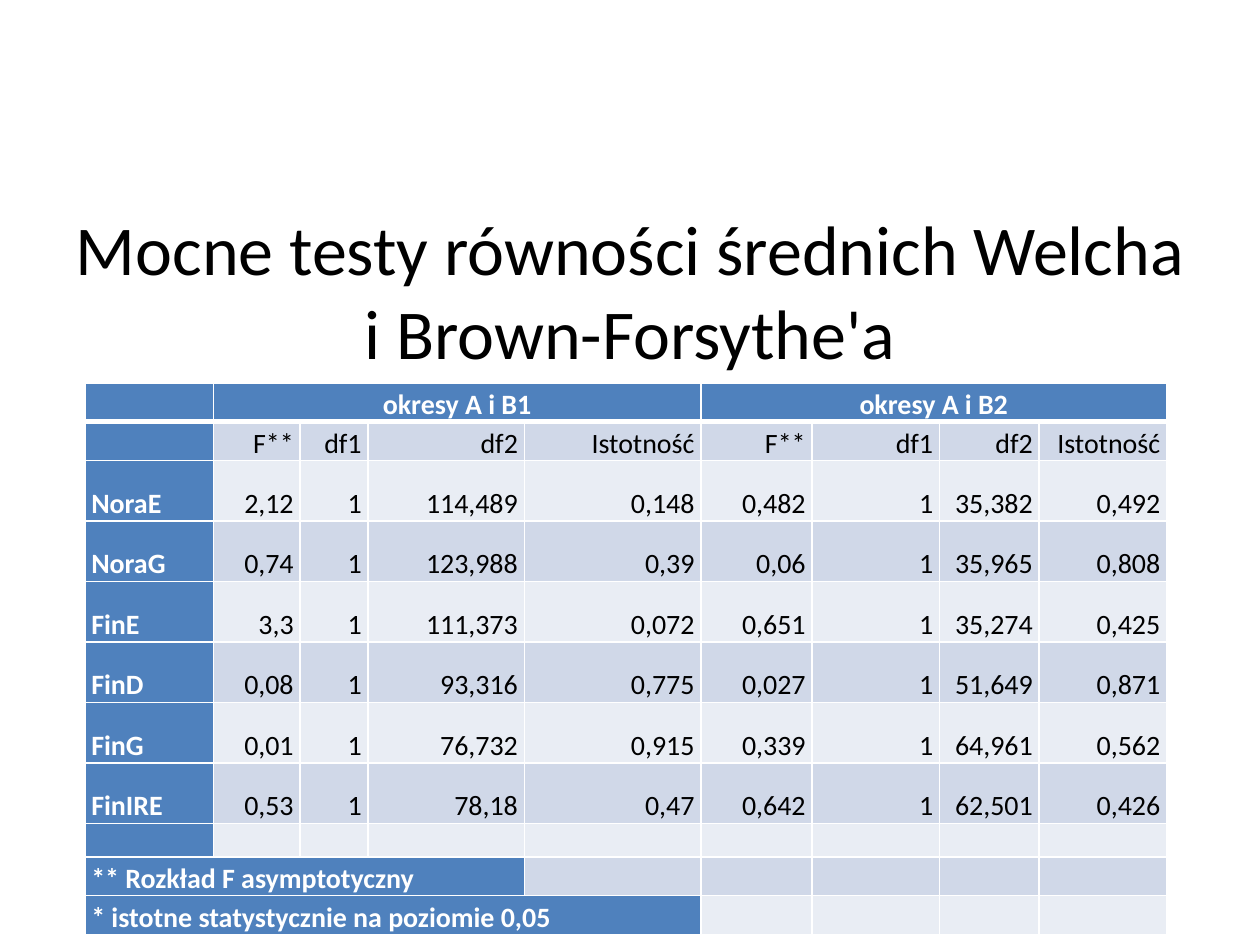
from dataclasses import dataclass

import lxml.etree
import pptx
import pptx.dml.color
import pptx.enum.text
import pptx.oxml.ns
import pptx.table
import pptx.text.text
import pptx.util
from pptx.util import Cm

FONT = "Calibri"
BLACK, WHITE, BLUE = "000000", "FFFFFF", "4F81BD"
BANDS = ("E9EDF4", "D0D8E8")
ALIGN = pptx.enum.text.PP_ALIGN
ANCHOR = pptx.enum.text.MSO_ANCHOR

COLUMN_WIDTHS = (2.59, 1.75, 1.37, 3.15, 3.56, 2.24, 2.57, 2.01, 2.57)
MEASURES = ("F**", "df1", "df2", "Istotność")


@dataclass
class Row:
    """One table row; spans maps a starting column to the columns it covers."""
    height: float
    texts: dict[int, str]
    spans: dict[int, int]


def data_row(*texts: str) -> Row:
    return Row(1.22, dict(enumerate(texts)), {})


ROWS = (
    Row(0.61, {1: "okresy A i B1", 5: "okresy A i B2"}, {1: 4, 5: 4}),
    Row(0.61, dict(enumerate(MEASURES * 2, start=1)), {}),
    data_row("NoraE", "2,12", "1", "114,489", "0,148", "0,482", "1", "35,382", "0,492"),
    data_row("NoraG", "0,74", "1", "123,988", "0,39", "0,06", "1", "35,965", "0,808"),
    data_row("FinE", "3,3", "1", "111,373", "0,072", "0,651", "1", "35,274", "0,425"),
    data_row("FinD", "0,08", "1", "93,316", "0,775", "0,027", "1", "51,649", "0,871"),
    data_row("FinG", "0,01", "1", "76,732", "0,915", "0,339", "1", "64,961", "0,562"),
    data_row("FinIRE", "0,53", "1", "78,18", "0,47", "0,642", "1", "62,501", "0,426"),
    Row(0.64, {}, {}),
    Row(0.64, {0: "** Rozkład F asymptotyczny"}, {0: 4}),
    Row(0.64, {0: "* istotne statystycznie na poziomie 0,05"}, {0: 5}),
)


def color(value: str) -> pptx.dml.color.RGBColor:
    return pptx.dml.color.RGBColor.from_string(value)


def add_span(para: pptx.text.text._Paragraph, text: str, size: float,
             ink: str, bold: bool = False) -> None:
    span = para.add_run()
    span.text = text
    span.font.name = FONT
    span.font.size = pptx.util.Pt(size)
    span.font.bold = bold
    span.font.color.rgb = color(ink)


def set_borders(cell: pptx.table._Cell, bottom: float) -> None:
    properties = cell._tc.get_or_add_tcPr()
    for side, width in (("L", 1), ("R", 1), ("T", 1), ("B", bottom)):
        line = lxml.etree.SubElement(properties, pptx.oxml.ns.qn(f"a:ln{side}"),
                                     w=str(pptx.util.Pt(width)))
        fill = lxml.etree.SubElement(line, pptx.oxml.ns.qn("a:solidFill"))
        lxml.etree.SubElement(fill, pptx.oxml.ns.qn("a:srgbClr"), val=WHITE)


def write_cell(cell: pptx.table._Cell, text: str, align: ALIGN, heading: bool) -> None:
    para = cell.text_frame.paragraphs[0]
    if not text:
        # The end mark sets the line height of an empty cell.
        lxml.etree.SubElement(para._p, pptx.oxml.ns.qn("a:endParaRPr"), sz="1000")
        return
    cell.vertical_anchor = ANCHOR.BOTTOM
    cell.margin_left = cell.margin_right = Cm(0.13)
    cell.margin_top = cell.margin_bottom = Cm(0)
    para.alignment = align
    para.line_spacing = 1.15
    add_span(para, text, 16, WHITE if heading else BLACK, heading)


def add_title(page) -> None:
    box = page.shapes.add_textbox(Cm(1.27), Cm(4.01), Cm(22.86), Cm(2.49))
    box.text_frame.word_wrap = True
    box.text_frame.vertical_anchor = ANCHOR.TOP
    para = box.text_frame.paragraphs[0]
    para.alignment = ALIGN.CENTER
    add_span(para, "Mocne testy równości średnich Welcha i Brown-Forsythe'a", 40, BLACK)


def add_results(page) -> None:
    table = page.shapes.add_table(
        len(ROWS), len(COLUMN_WIDTHS), Cm(1.71), Cm(7.72),
        Cm(sum(COLUMN_WIDTHS)), Cm(sum(row.height for row in ROWS))).table
    for column, width in zip(table.columns, COLUMN_WIDTHS):
        column.width = Cm(width)
    for r, row in enumerate(ROWS):
        table.rows[r].height = Cm(row.height)
        for start, count in row.spans.items():
            table.cell(r, start).merge(table.cell(r, start + count - 1))
        for c in range(len(COLUMN_WIDTHS)):
            cell = table.cell(r, c)
            heading = r == 0 or c < row.spans.get(0, 1)
            set_borders(cell, bottom=3 if r == 0 else 1)
            cell.fill.solid()
            cell.fill.fore_color.rgb = color(BLUE if heading else BANDS[r % 2])
            align = ALIGN.LEFT if c == 0 else ALIGN.CENTER if r == 0 else ALIGN.RIGHT
            write_cell(cell, row.texts.get(c, ""), align, heading)


def main() -> None:
    deck = pptx.Presentation()
    deck.slide_width, deck.slide_height = Cm(25.4), Cm(19.05)
    page = deck.slides.add_slide(deck.slide_layouts[6])
    add_title(page)
    add_results(page)
    deck.save("out.pptx")


if __name__ == "__main__":
    main()
